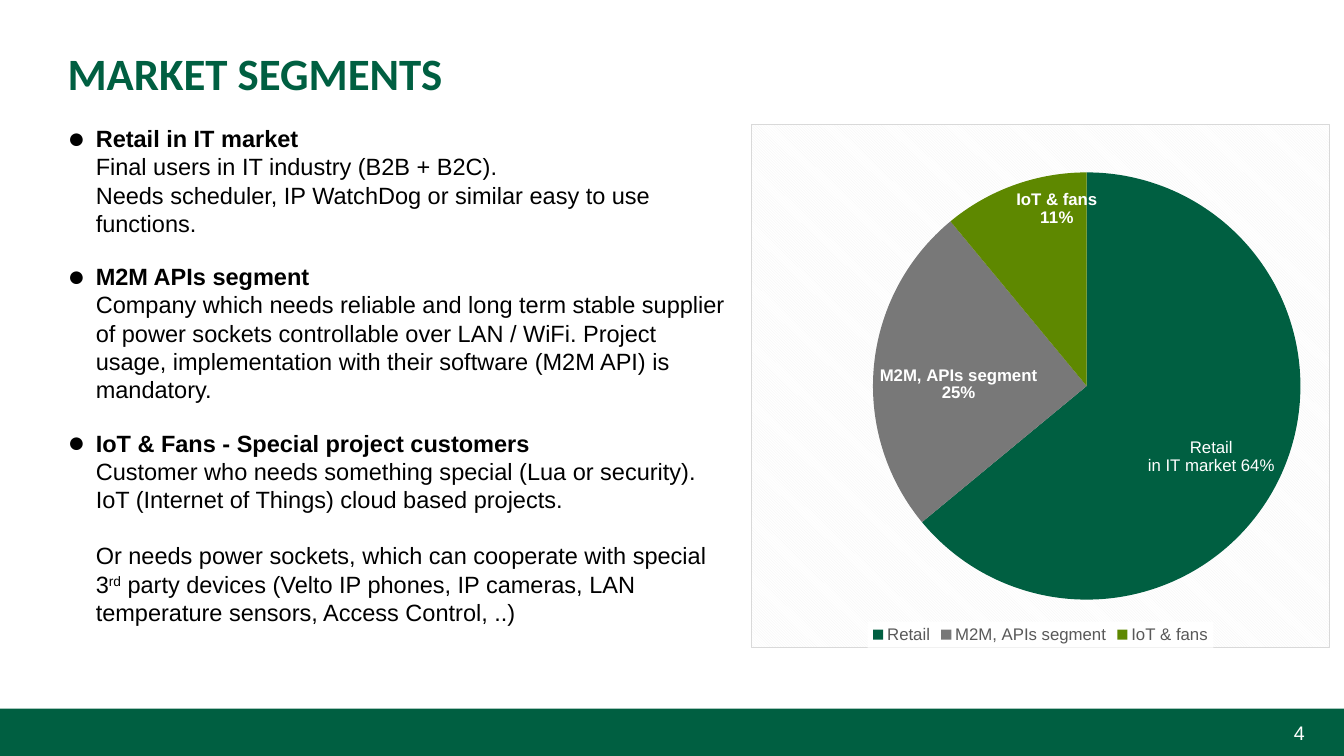
from lxml import etree
from pptx import Presentation
from pptx.chart.data import CategoryChartData
from pptx.dml.color import RGBColor
from pptx.enum.chart import XL_CHART_TYPE, XL_LABEL_POSITION as LabelPosition, XL_LEGEND_POSITION
from pptx.enum.shapes import MSO_SHAPE
from pptx.enum.text import MSO_ANCHOR as Anchor, PP_ALIGN as Align
from pptx.oxml import parse_xml
from pptx.oxml.ns import nsdecls, qn
from pptx.util import Inches, Pt

GREEN = RGBColor(0x00, 0x5F, 0x41)
GREY = RGBColor(0x78, 0x78, 0x78)
OLIVE = RGBColor(0x5E, 0x88, 0x00)
LEGEND_GREY = RGBColor(0x59, 0x59, 0x59)
BLACK = RGBColor(0x00, 0x00, 0x00)
WHITE = RGBColor(0xFF, 0xFF, 0xFF)

TITLE_FONT = {"name": "Calibri", "size": Pt(32), "bold": True}
BODY_FONT = {"name": "Arial", "size": Pt(16.8)}
NUMBER_FONT = {"name": "Arial", "size": Pt(14)}
CHART_FONT = {"name": "Arial", "size": Pt(12)}

SEGMENTS = [
    ("Retail in IT market",
     "Final users in IT industry (B2B + B2C).\n"
     "Needs scheduler, IP WatchDog or similar easy to use functions."),
    ("M2M APIs segment",
     "Company which needs reliable and long term stable supplier of power sockets "
     "controllable over LAN / WiFi. Project usage, implementation with their software "
     "(M2M API) is mandatory."),
    ("IoT & Fans - Special project customers",
     "Customer who needs something special (Lua or security).\n"
     "IoT (Internet of Things) cloud based projects."),
]
SHARES = [("Retail", 64, GREEN), ("M2M, APIs segment", 25, GREY), ("IoT & fans", 11, OLIVE)]


def set_attributes(target, values):
    for name, value in values.items():
        setattr(target, name, value)


def style_font(font, values, color):
    set_attributes(font, values)
    font.color.rgb = color


def add_run(paragraph, text, values, color, bold=None):
    run = paragraph.add_run()
    run.text = text
    style_font(run.font, values, color)
    if bold is not None:
        run.font.bold = bold
    return run


def add_break(paragraph):
    """Add a line break as tall as the body text."""
    paragraph.add_line_break()
    etree.SubElement(paragraph._p[-1], qn("a:rPr"), sz="1680")


def add_text_frame(slide, left, top, width, height, right_inset=0):
    box = slide.shapes.add_textbox(Inches(left), Inches(top), Inches(width), Inches(height))
    frame = box.text_frame
    set_attributes(frame, {"word_wrap": True, "margin_left": 0, "margin_top": 0,
                           "margin_right": Inches(right_inset), "margin_bottom": 0})
    return frame


def set_indent(paragraph, first_line, bullet=None):
    properties = paragraph._p.get_or_add_pPr()
    properties.set("marL", str(Inches(0.28)))
    properties.set("indent", str(Inches(first_line)))
    if bullet:
        etree.SubElement(properties, qn("a:buSzPct"), val="125000")
        etree.SubElement(properties, qn("a:buFont"), typeface="Arial")
        etree.SubElement(properties, qn("a:buChar"), char=bullet)


def add_title(slide):
    paragraph = add_text_frame(slide, 0.67, 0.51, 12, 0.7).paragraphs[0]
    paragraph.line_spacing = 0.9
    add_run(paragraph, "MARKET SEGMENTS", TITLE_FONT, GREEN)


def add_segments(slide):
    frame = add_text_frame(slide, 0.67, 1.23, 6.59, 5.31)
    for index, (heading, description) in enumerate(SEGMENTS):
        paragraph = frame.add_paragraph() if index else frame.paragraphs[0]
        set_indent(paragraph, -0.28, "●")
        paragraph.space_before = Pt(12 if index else 0)
        paragraph.space_after = Pt(6)
        add_run(paragraph, heading, BODY_FONT, BLACK, bold=True)
        for line in description.split("\n"):
            add_break(paragraph)
            add_run(paragraph, line, BODY_FONT, BLACK)

    closing = frame.add_paragraph()
    set_indent(closing, 0)
    closing.space_before = Pt(14)
    add_run(closing, "Or needs power sockets, which can cooperate with special 3", BODY_FONT, BLACK)
    ordinal = add_run(closing, "rd", BODY_FONT, BLACK)
    ordinal._r.get_or_add_rPr().set("baseline", "30000")
    add_run(closing, " party devices (Velto IP phones, IP cameras, LAN temperature sensors, "
            "Access Control, ..)", BODY_FONT, BLACK)


def add_footer(slide):
    band = slide.shapes.add_shape(
        MSO_SHAPE.RECTANGLE, 0, Inches(7.03), Inches(13.33), Inches(0.47))
    band.shadow.inherit = False
    band.fill.solid()
    band.fill.fore_color.rgb = GREEN
    band.line.fill.background()

    frame = add_text_frame(slide, 12.15, 7.03, 1.18, 0.47, right_inset=0.39)
    frame.vertical_anchor = Anchor.MIDDLE
    frame.paragraphs[0].alignment = Align.RIGHT
    add_run(frame.paragraphs[0], "4", NUMBER_FONT, WHITE)


def add_chart_background(chart):
    """Give the chart area a hatched fill and thin border, and the legend a white fill."""
    chart.element.find(qn("c:chart")).addnext(parse_xml(
        f'<c:spPr {nsdecls("c", "a")}><a:pattFill prst="dkDnDiag">'
        '<a:fgClr><a:srgbClr val="F2F2F2"/></a:fgClr>'
        '<a:bgClr><a:srgbClr val="FFFFFF"/></a:bgClr></a:pattFill>'
        '<a:ln w="9525"><a:solidFill><a:srgbClr val="D9D9D9"/></a:solidFill></a:ln></c:spPr>'))
    chart.element.find(f'.//{qn("c:legend")}/{qn("c:overlay")}').addnext(parse_xml(
        f'<c:spPr {nsdecls("c", "a")}><a:solidFill><a:srgbClr val="FFFFFF"/></a:solidFill></c:spPr>'))


def place_plot(chart, **fractions):
    """Fix the pie's inner area, given as fractions of the chart."""
    plot_area = chart.element.find(f'.//{qn("c:plotArea")}')
    for automatic in plot_area.findall(qn("c:layout")):
        plot_area.remove(automatic)
    layout = etree.Element(qn("c:layout"))
    manual = etree.SubElement(layout, qn("c:manualLayout"))
    settings = {"layoutTarget": "inner", "xMode": "edge", "yMode": "edge", **fractions}
    for name, value in settings.items():
        etree.SubElement(manual, qn(f"c:{name}"), val=str(value))
    plot_area.insert(0, layout)


def label_slices(series):
    labels = series.data_labels
    set_attributes(labels, {"show_value": False, "show_category_name": True,
                            "show_percentage": True, "position": LabelPosition.INSIDE_END})
    style_font(labels.font, {**CHART_FONT, "bold": True}, WHITE)
    separator = etree.Element(qn("c:separator"))
    separator.text = "\n"
    series._element.find(f'{qn("c:dLbls")}/{qn("c:showPercent")}').getparent().find(
        qn("c:showBubbleSize")).addnext(separator)

    retail_label = series.points[0].data_label
    frame = retail_label.text_frame
    add_run(frame.paragraphs[0], "Retail", CHART_FONT, WHITE, bold=False)
    add_run(frame.add_paragraph(), "in IT market 64%", CHART_FONT, WHITE, bold=False)
    retail_label.position = LabelPosition.INSIDE_END


def add_share_chart(slide):
    data = CategoryChartData()
    data.categories = [name for name, _, _ in SHARES]
    data.add_series("Series 1", [share for _, share, _ in SHARES])
    chart = slide.shapes.add_chart(XL_CHART_TYPE.PIE, Inches(7.45), Inches(1.23),
                                   Inches(5.74), Inches(5.2), data).chart
    style_font(chart.font, {"name": "Arial", "size": Pt(10)}, BLACK)
    set_attributes(chart, {"has_title": False, "has_legend": True})
    set_attributes(chart.legend, {"position": XL_LEGEND_POSITION.BOTTOM,
                                  "include_in_layout": False})
    style_font(chart.legend.font, CHART_FONT, LEGEND_GREY)

    plot = chart.plots[0]
    plot.vary_by_categories = True
    series = plot.series[0]
    for index, (_, _, color) in enumerate(SHARES):
        fill = series.points[index].format.fill
        fill.solid()
        fill.fore_color.rgb = color
    label_slices(series)
    place_plot(chart, x=0.21, y=0.09, w=0.74, h=0.82)
    add_chart_background(chart)


def main():
    presentation = Presentation()
    presentation.slide_width = Inches(13.33)
    presentation.slide_height = Inches(7.5)
    slide = presentation.slides.add_slide(presentation.slide_layouts[6])
    add_footer(slide)
    add_title(slide)
    add_segments(slide)
    add_share_chart(slide)
    presentation.save("out.pptx")


if __name__ == "__main__":
    main()
